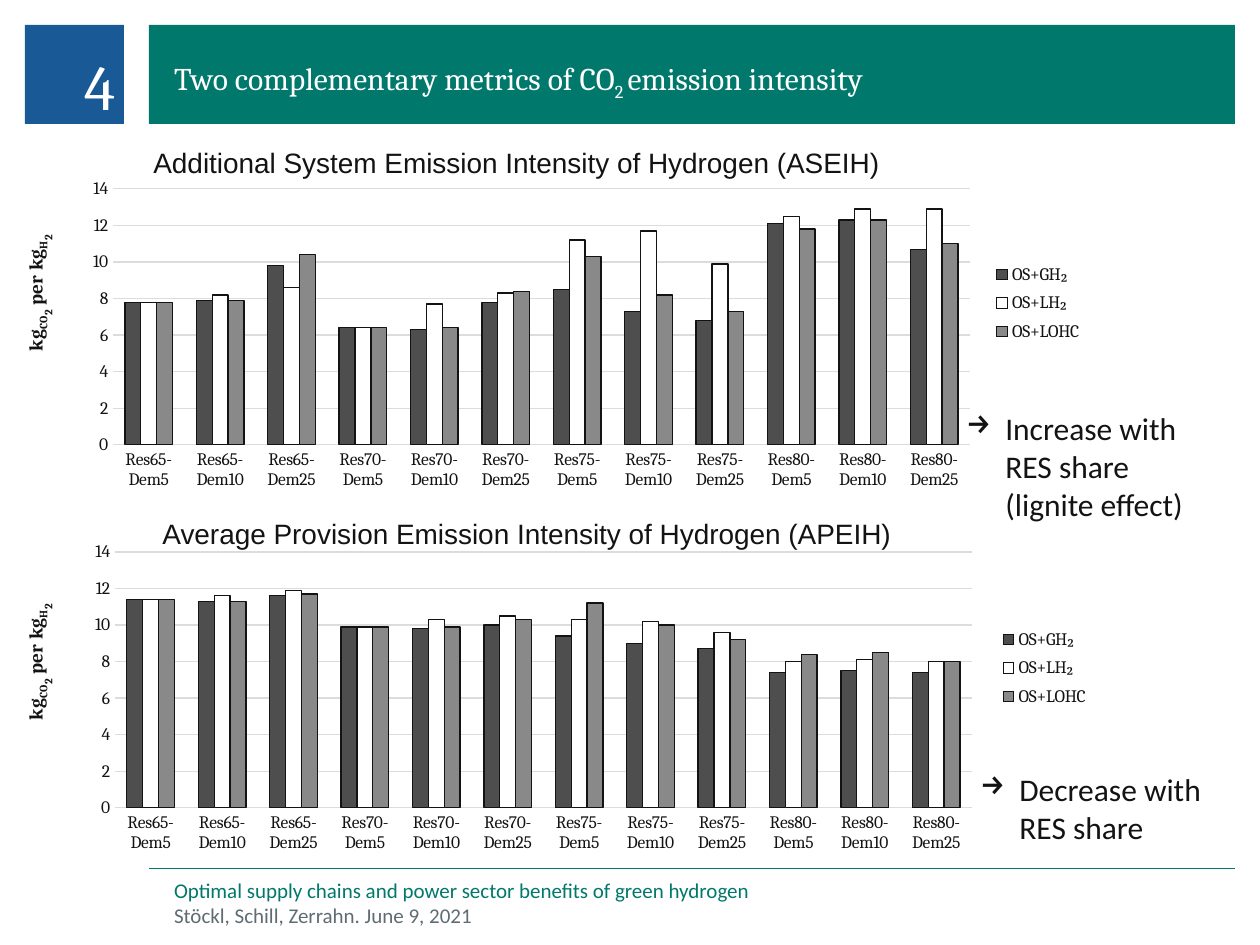
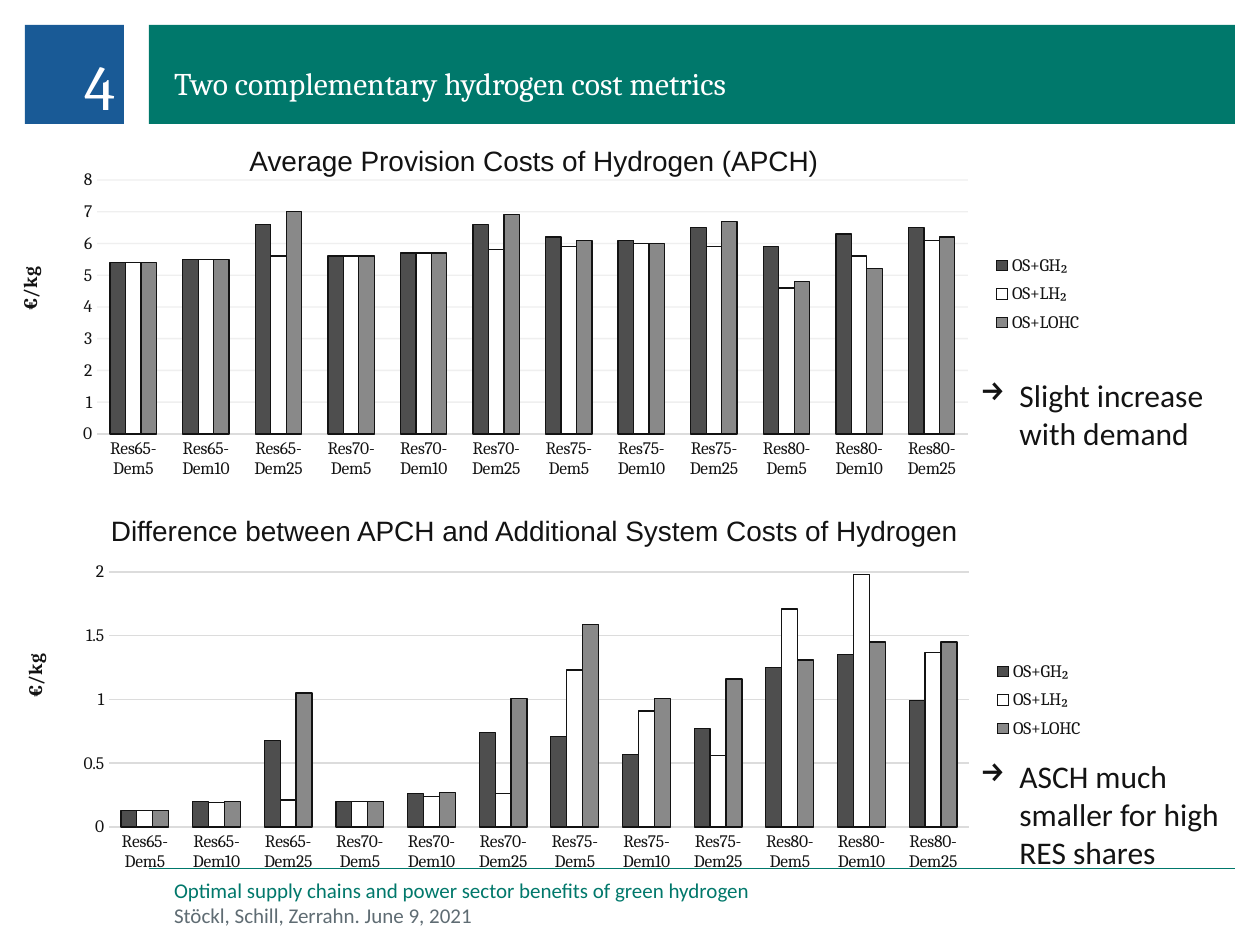
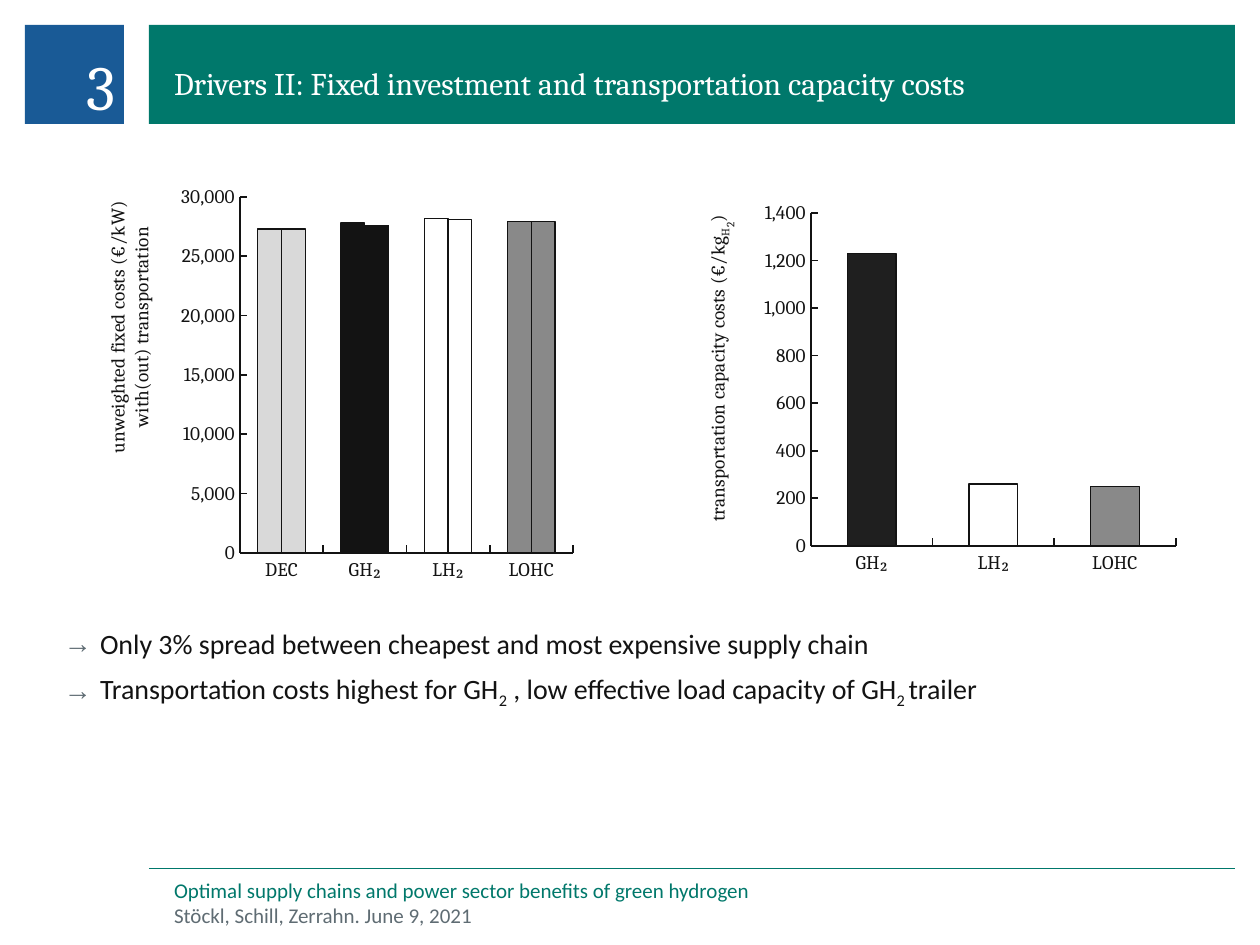
import lxml.etree
import pptx
import pptx.chart.data
import pptx.dml.color
import pptx.enum.chart
import pptx.enum.shapes
import pptx.enum.text
import pptx.oxml.ns
import pptx.util

qn = pptx.oxml.ns.qn
ALIGN = pptx.enum.text.PP_ALIGN
ANCHOR = pptx.enum.text.MSO_ANCHOR
TICK = pptx.enum.chart.XL_TICK_MARK

EMU_PER_PX = 914400 / 126
BLUE, GREEN, GREY = "195A96", "00786B", "5F6C73"
WHITE, INK, PALE = "FFFFFF", "131313", "DCDCDC"
DARK_BAR, GREY_BAR = "4E4E4E", "898989"
HEAD, BODY, LABEL = "Cambria", "Calibri", "Arial"

FOOTERS = [
    ("Optimal supply chains and power sector benefits of green hydrogen", GREEN),
    ("Stöckl, Schill, Zerrahn. June 9, 2021", GREY),
]
SCENARIOS = [f"Res{share}-Dem{demand}" for share in (65, 70, 75, 80) for demand in (5, 10, 25)]
CHAINS = [("OS+GH₂", DARK_BAR), ("OS+LH₂", WHITE), ("OS+LOHC", GREY_BAR)]
LEGEND_SIZE = (108, 94)
# Each text span is (text, subscript depth).
INTENSITY = [("kg", 0), ("CO", 1), ("2", 2), (" per kg", 0), ("H", 1), ("2", 2)]
EURO = [("€/kg", 0)]


def px(length):
    return pptx.util.Emu(round(length * EMU_PER_PX))


def rgb(code):
    return pptx.dml.color.RGBColor.from_string(code)


def assign(target, values):
    for name, value in values.items():
        setattr(target, name, value)


def style_font(font, size, name, color, **extras):
    assign(font, {"size": pptx.util.Pt(size), "name": name, **extras})
    font.color.rgb = rgb(color)


def paint(target, fill, line, width=0.75):
    target.fill.solid()
    target.fill.fore_color.rgb = rgb(fill)
    draw_line(target.line, line, width)


def draw_line(line, color, width=0.75):
    line.color.rgb = rgb(color)
    line.width = pptx.util.Pt(width)


def place(shape, box):
    assign(shape, dict(zip(("left", "top", "width", "height"), map(px, box))))


def shift(box, offset):
    return (box[0] + offset[0], box[1] + offset[1], *offset[2:])


def write(para, spans, size, name, color, **extras):
    for text, depth in spans:
        if text == "\n":
            para.add_line_break()
            continue
        span = para.add_run()
        span.text = text
        style_font(span.font, size, name, color, **extras)
        if depth:
            span._r.get_or_add_rPr().set("baseline", str(-25000 * depth))


def set_bullet(para, indent, char=None, color=None):
    props = para._p.get_or_add_pPr()
    props.set("marL", str(px(indent)))
    props.set("indent", str(-px(indent)))
    if color:
        holder = lxml.etree.SubElement(props, qn("a:buClr"))
        lxml.etree.SubElement(holder, qn("a:srgbClr"), val=color)
    if char:
        lxml.etree.SubElement(props, qn("a:buChar"), char=char)
    else:
        lxml.etree.SubElement(props, qn("a:buNone"))


def prepare_frame(shape, anchor=ANCHOR.TOP, flush=True):
    frame = shape.text_frame
    assign(frame, {"word_wrap": True, "vertical_anchor": anchor,
                   "auto_size": pptx.enum.text.MSO_AUTO_SIZE.NONE})
    if flush:
        assign(frame, dict.fromkeys(
            ("margin_left", "margin_top", "margin_right", "margin_bottom"), 0))
    return frame


def add_text(page, box, spans, size, name, color, flush=False, align=ALIGN.LEFT, bullet=False):
    shape = page.shapes.add_textbox(*map(px, box))
    para = prepare_frame(shape, flush=flush).paragraphs[0]
    para.alignment = align
    if bullet:
        set_bullet(para, 39, "→")
    write(para, spans, size, name, color)


def add_master_bands(deck, page):
    """Draw the shared bands and rule, then move them to the slide master."""
    parts = []
    for box, color in (((25, 25, 99, 99), BLUE), ((149, 25, 1086, 99), GREEN)):
        band = page.shapes.add_shape(pptx.enum.shapes.MSO_SHAPE.RECTANGLE, *map(px, box))
        band.shadow.inherit = False
        band.fill.solid()
        band.fill.fore_color.rgb = rgb(color)
        band.line.fill.background()
        parts.append(band)
    rule = page.shapes.add_connector(
        pptx.enum.shapes.MSO_CONNECTOR.STRAIGHT, *map(px, (149, 868, 1235, 868)))
    draw_line(rule.line, GREEN, 0.5)
    lxml.etree.SubElement(rule._element.spPr, qn("a:effectLst"))
    parts.append(rule)
    for part in parts:
        deck.slide_master.shapes._spTree.append(part._element)


def add_page(deck, layout, chapter, title):
    page = deck.slides.add_slide(deck.slide_layouts.get_by_name(layout))
    if len(deck.slides) == 1:
        add_master_bands(deck, page)
    place(page.shapes.title, (174, 42, 1029, 60))
    para = prepare_frame(page.shapes.title, ANCHOR.BOTTOM).paragraphs[0]
    para.alignment = ALIGN.LEFT
    write(para, title, 18, HEAD, WHITE)

    number = page.placeholders[1]
    place(number, (21, 32, 95, 95))
    para = prepare_frame(number).paragraphs[0]
    set_bullet(para, 0)
    assign(para, {"alignment": ALIGN.RIGHT, "line_spacing": 1.2,
                  "space_before": pptx.util.Pt(0)})
    write(para, [(chapter, 0)], 36, HEAD, WHITE)

    for row, (text, color) in enumerate(FOOTERS):
        add_text(page, (174, 878 + 25 * row, 840, 25), [(text, 0)], 12, BODY, color, flush=True)
    return page


def set_layout(element, successor, size, part, inner=False):
    """Fix a chart part at px values measured from the chart's corner."""
    layout = element.find(qn("c:layout"))
    if layout is None:
        layout = element.makeelement(qn("c:layout"))
        element.find(qn(successor)).addprevious(layout)
    manual = lxml.etree.SubElement(layout, qn("c:manualLayout"))
    values = [("layoutTarget", "inner")] if inner else []
    values += [("xMode", "edge"), ("yMode", "edge")]
    values += [(key, f"{length / size[i % 2]:.4f}")
               for i, (key, length) in enumerate(zip("xywh", part))]
    for key, value in values:
        lxml.etree.SubElement(manual, qn("c:" + key), val=value)


def add_axis_title(axis, lines, size, corner, bold):
    title = axis.axis_title
    frame = title.text_frame
    frame._txBody.bodyPr.set("rot", "-5400000")
    frame._txBody.bodyPr.set("vert", "horz")
    for i, spans in enumerate(lines):
        para = frame.add_paragraph() if i else frame.paragraphs[0]
        write(para, spans, 11, HEAD, INK, bold=bold)
    set_layout(title._element, "c:overlay", size, corner)


def add_columns(page, box, categories, series, plot, lines, corner, top, step,
                bold=False, gap=150, number_format="General"):
    data = pptx.chart.data.CategoryChartData()
    data.categories = categories
    for name, values, _ in series:
        data.add_series(name, values)
    chart = page.shapes.add_chart(
        pptx.enum.chart.XL_CHART_TYPE.COLUMN_CLUSTERED, *map(px, box), data).chart
    style_font(chart.font, 10, HEAD, INK)
    assign(chart, {"has_title": False, "has_legend": False})
    bars = chart.plots[0]
    assign(bars, {"gap_width": gap, "overlap": 0, "vary_by_categories": False})
    for item, (_, _, colors) in zip(bars.series, series):
        item.invert_if_negative = False
        paint(item.format, colors[0], INK)
        for i, color in enumerate(colors[1:], 1):
            paint(item.points[i].format, color, INK)
    axis = chart.value_axis
    assign(axis, {"minimum_scale": 0, "maximum_scale": top, "major_unit": step})
    assign(axis.tick_labels, {"number_format": number_format,
                              "number_format_is_linked": False})
    add_axis_title(axis, lines, box[2:], corner, bold)
    set_layout(chart._chartSpace.chart.plotArea, "c:barChart", box[2:], plot, inner=True)
    return chart


def add_metric(page, box, heading, callout, values, legend, heading_align=ALIGN.LEFT,
               grid_alpha=None, **chart_options):
    """Scenario chart with its heading and takeaway, all placed from the chart box."""
    series = [(name, row, [color]) for (name, color), row in zip(CHAINS, values)]
    chart = add_columns(page, box, SCENARIOS, series, bold=True, **chart_options)
    for axis in (chart.category_axis, chart.value_axis):
        axis.major_tick_mark = TICK.NONE
    draw_line(chart.category_axis.format.line, PALE)
    chart.value_axis.format.line.fill.background()
    grid = chart.value_axis.major_gridlines.format.line
    draw_line(grid, PALE)
    if grid_alpha:
        color = chart.value_axis._element.find(".//" + qn("c:majorGridlines")).find(
            ".//" + qn("a:srgbClr"))
        lxml.etree.SubElement(color, qn("a:alpha"), val=str(grid_alpha * 1000))

    chart.has_legend = True
    assign(chart.legend, {"position": pptx.enum.chart.XL_LEGEND_POSITION.RIGHT,
                          "include_in_layout": False})
    style_font(chart.legend.font, 10, HEAD, INK)
    set_layout(chart.legend._element, "c:overlay", box[2:], legend + LEGEND_SIZE)

    text, offset = heading
    add_text(page, shift(box, offset), [(text, 0)], 16, LABEL, INK, align=heading_align)
    spans, offset = callout
    add_text(page, shift(box, offset), spans, 18, BODY, INK, bullet=True)


def add_cost_chart(page, box, categories, series, **chart_options):
    chart = add_columns(page, box, categories, series, number_format="#,##0", **chart_options)
    chart.value_axis.has_major_gridlines = False
    for axis in (chart.category_axis, chart.value_axis):
        axis.major_tick_mark = TICK.INSIDE
        draw_line(axis.format.line, INK, 1)
        style_font(axis.tick_labels.font, 11, HEAD, INK)


def add_findings(shape, box, findings):
    place(shape, box)
    frame = prepare_frame(shape)
    for i, spans in enumerate(findings):
        para = frame.add_paragraph() if i else frame.paragraphs[0]
        set_bullet(para, 36, "→", GREY)
        assign(para, {"line_spacing": 1.2, "space_before": pptx.util.Pt(0),
                      "space_after": pptx.util.Pt(2)})
        write(para, spans, 16, BODY, INK)


def build_emissions(deck):
    page = add_page(deck, "Title and Content", "4", [
        ("Two complementary metrics of CO", 0), ("2 ", 1), ("emission intensity", 0)])
    scale = {"lines": [INTENSITY], "top": 14, "step": 2}
    add_metric(
        page, (5, 173, 1091, 323),
        ("Additional System Emission Intensity of Hydrogen (ASEIH)", (136, -34, 862, 47)),
        ([("Increase with RES share ", 0), ("\n", 0), ("(lignite effect)", 0)],
         (949, 230, 287, 127)),
        [[7.8, 7.9, 9.8, 6.4, 6.3, 7.8, 8.5, 7.3, 6.8, 12.1, 12.3, 10.7],
         [7.8, 8.2, 8.6, 6.4, 7.7, 8.3, 11.2, 11.7, 9.9, 12.5, 12.9, 12.9],
         [7.8, 7.9, 10.4, 6.4, 6.4, 8.4, 10.3, 8.2, 7.3, 11.8, 12.3, 11]],
        legend=(979, 83), plot=(108, 16, 857, 256), corner=(13, 58), **scale)
    add_metric(
        page, (6, 536, 1091, 323),
        ("Average Provision Emission Intensity of Hydrogen (APEIH)", (144, -26, 901, 47)),
        ([("Decrease with RES share", 0)], (962, 228, 287, 89)),
        [[11.4, 11.3, 11.6, 9.9, 9.8, 10, 9.4, 9, 8.7, 7.4, 7.5, 7.4],
         [11.4, 11.6, 11.9, 9.9, 10.3, 10.5, 10.3, 10.2, 9.6, 8, 8.1, 8],
         [11.4, 11.3, 11.7, 9.9, 9.9, 10.3, 11.2, 10, 9.2, 8.4, 8.5, 8]],
        legend=(986, 85), plot=(109, 16, 857, 256), corner=(12, 64), **scale)


def build_costs(deck):
    page = add_page(deck, "Title and Content", "4",
                    [("Two complementary hydrogen cost metrics", 0)])
    shared = {"lines": [EURO], "heading_align": ALIGN.CENTER}
    add_metric(
        page, (3, 164, 1091, 321),
        ("Average Provision Costs of Hydrogen (APCH)", (100, -27, 862, 47)),
        ([("Slight increase with demand", 0)], (965, 206, 258, 127)),
        [[5.4, 5.5, 6.6, 5.6, 5.7, 6.6, 6.2, 6.1, 6.5, 5.9, 6.3, 6.5],
         [5.4, 5.5, 5.6, 5.6, 5.7, 5.8, 5.9, 6, 5.9, 4.6, 5.6, 6.1],
         [5.4, 5.5, 7, 5.6, 5.7, 6.9, 6.1, 6, 6.7, 4.8, 5.2, 6.2]],
        legend=(981, 83), plot=(94, 16, 871, 254), corner=(10, 99),
        top=8, step=1, gap=170, grid_alpha=44, **shared)
    add_metric(
        page, (4, 554, 1091, 323),
        ("Difference between APCH and Additional System Costs of Hydrogen",
         (80, -47, 901, 47)),
        ([("ASCH much smaller for high RES shares", 0)], (964, 197, 287, 127)),
        [[0.13, 0.2, 0.68, 0.2, 0.26, 0.74, 0.71, 0.57, 0.77, 1.25, 1.35, 0.99],
         [0.13, 0.19, 0.21, 0.2, 0.24, 0.26, 1.23, 0.91, 0.56, 1.71, 1.98, 1.37],
         [0.13, 0.2, 1.05, 0.2, 0.27, 1.01, 1.59, 1.01, 1.16, 1.31, 1.45, 1.45]],
        legend=(981, 99), plot=(105, 18, 860, 255), corner=(14, 96),
        top=2, step=0.5, **shared)


def build_drivers(deck):
    page = add_page(deck, "Two Content", "3", [
        ("Drivers II: Fixed investment and transportation capacity costs", 0)])
    add_findings(page.placeholders[2], (64, 620, 1138, 100), [
        [("Only 3% spread between cheapest and most expensive supply chain", 0)],
        [("Transportation costs highest for GH", 0), ("2", 1),
         (" , low effective load capacity of GH", 0), ("2 ", 1), ("trailer", 0)]])
    chains = ["DEC", "GH₂", "LH₂", "LOHC"]
    shades = ["D9D9D9", INK, WHITE, GREY_BAR]
    add_cost_chart(
        page, (78, 158, 552, 478), chains,
        [("Series 1", [27300, 27800, 28200, 27900], shades),
         ("Series 2", [27300, 27600, 28100, 27900], shades)],
        plot=(162, 39, 333, 356), corner=(22, 39), top=30000, step=5000,
        lines=[[("unweighted fixed costs (€/kW)", 0)], [("with(out) transportation", 0)]])
    add_cost_chart(
        page, (688, 175, 500, 446), chains[1:],
        [("Series 1", [1230, 260, 250], ["1F1F1F", WHITE, GREY_BAR])],
        plot=(123, 38, 365, 333), corner=(12, 36), top=1400, step=200,
        lines=[[("transportation capacity costs (€/kg", 0), ("H", 1), ("2", 2), (")", 0)]])


def main():
    deck = pptx.Presentation()
    assign(deck, {"slide_width": px(1260), "slide_height": px(945)})
    for build in (build_emissions, build_costs, build_drivers):
        build(deck)
    deck.save("out.pptx")


if __name__ == "__main__":
    main()
